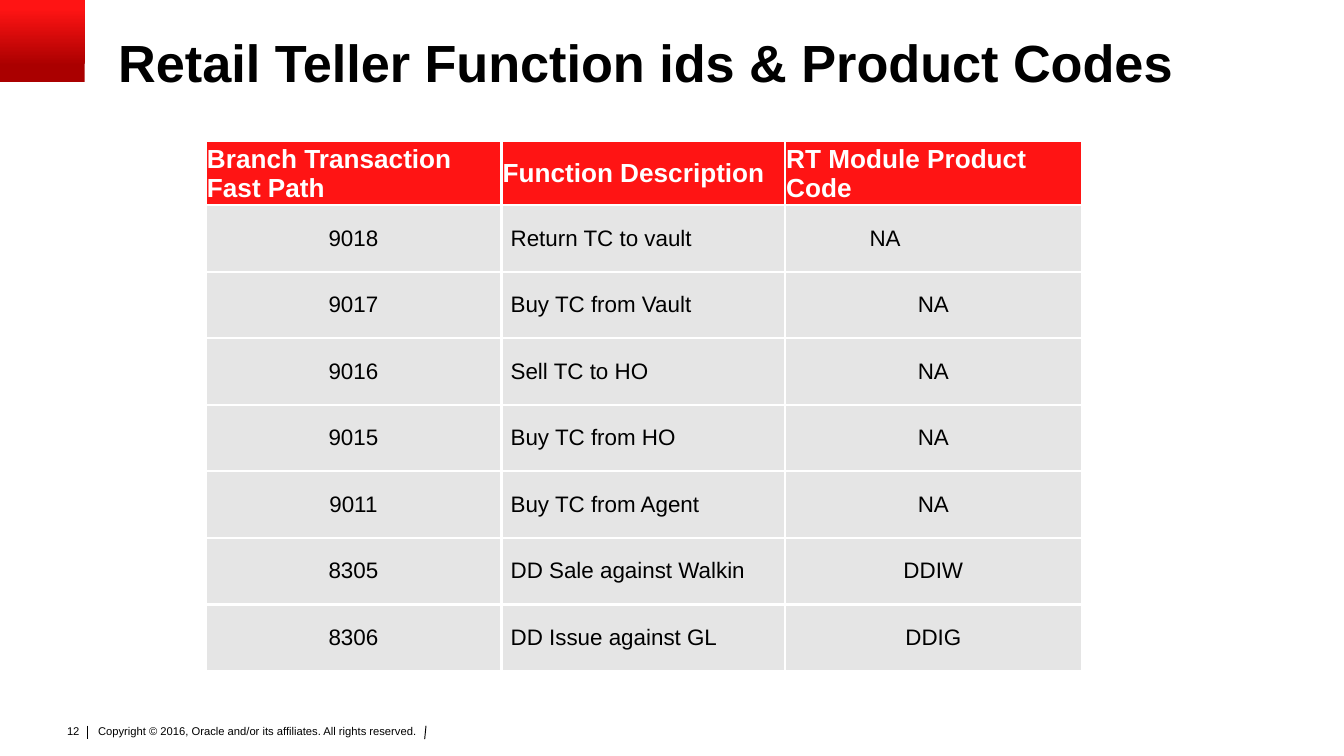
from dataclasses import dataclass
from typing import NamedTuple

from lxml.etree import SubElement
from pptx import Presentation
from pptx.dml.color import RGBColor as RGB
from pptx.enum.shapes import MSO_CONNECTOR as Conn, MSO_SHAPE as Shape
from pptx.enum.text import MSO_ANCHOR as Anchor, MSO_AUTO_SIZE as Auto, PP_ALIGN as Align
from pptx.oxml.ns import qn
from pptx.util import Pt

SCALE = 4572


@dataclass(frozen=True)
class Theme:
    font: str = "Arial"
    black: str = "000000"
    white: str = "FFFFFF"
    red: str = "FF1414"
    dark_red: str = "AA0000"
    grey: str = "E5E5E5"
    title: int = 28
    header: int = 14
    body: int = 12
    footer: int = 6
    border: float = 1.5
    rule: float = 0.5


T = Theme()


class Box(NamedTuple):
    x: int
    y: int
    w: int
    h: int


class Rule(NamedTuple):
    x1: int
    y1: int
    x2: int
    y2: int


class Label(NamedTuple):
    box: Box
    text: str
    size: int
    margins: tuple[int, int, int, int]
    bold: bool = False
    align: Align = Align.LEFT
    anchor: Anchor = Anchor.TOP
    spacing: float = 1.0
    wrap: bool = True


class Transaction(NamedTuple):
    fast_path: str
    description: str
    product: str
    product_indent: int = 0


LABELS = [
    Label(Box(138, 1074, 548, 48),
          "Copyright © 2016, Oracle and/or its affiliates. All rights reserved.",
          T.footer, (8, 4, 8, 4)),
    Label(Box(78, 1068, 60, 40), "12", T.footer, (20, 10, 20, 10),
          align=Align.RIGHT, wrap=False),
    Label(Box(176, 54, 1800, 88), "Retail Teller Function ids & Product Codes",
          T.title, (0, 0, 0, 0), bold=True, anchor=Anchor.MIDDLE, spacing=0.9),
]
RULES = [Rule(130, 1080, 130, 1100), Rule(634, 1080, 632, 1100)]
CORNER = Box(0, 0, 126, 122)

TABLE = Box(306, 210, 1304, 757)
COLUMNS = (440, 422, 442)
HEADER_HEIGHT, ROW_HEIGHT = 64, 99
HEADERS = ("Branch Transaction Fast Path", "Function Description", "RT Module Product Code")
TRANSACTIONS = [
    Transaction("9018", "Return TC to vault", "NA", 112),
    Transaction("9017", "Buy TC from Vault", "NA"),
    Transaction("9016", "Sell TC to HO", "NA"),
    Transaction("9015", "Buy TC from HO", "NA"),
    Transaction("9011", "Buy TC from Agent", "NA"),
    Transaction("8305", "DD Sale against Walkin", "DDIW"),
    Transaction("8306", "DD Issue against GL", "DDIG"),
]


def px(n: int) -> int:
    return n * SCALE


def write(tf, text: str, *, size: int, color: str = T.black, bold: bool = False,
          align: Align = Align.LEFT, spacing: float = 1.0) -> None:
    p = tf.paragraphs[0]
    p.alignment = align
    p.line_spacing = spacing
    r = p.add_run()
    r.text = text
    r.font.name = T.font
    r.font.size = Pt(size)
    r.font.bold = bold
    r.font.color.rgb = RGB.from_string(color)


def set_margins(target, margins: tuple[int, int, int, int]) -> None:
    target.margin_left, target.margin_top, target.margin_right, target.margin_bottom = map(px, margins)


def draw_label(s, label: Label) -> None:
    tf = s.shapes.add_textbox(*map(px, label.box)).text_frame
    tf.word_wrap = label.wrap
    tf.auto_size = Auto.NONE if label.wrap else Auto.SHAPE_TO_FIT_TEXT
    tf.vertical_anchor = label.anchor
    set_margins(tf, label.margins)
    write(tf, label.text, size=label.size, bold=label.bold, align=label.align,
          spacing=label.spacing)


def draw_rule(s, rule: Rule) -> None:
    line = s.shapes.add_connector(Conn.STRAIGHT, *map(px, rule))
    line.line.color.rgb = RGB.from_string(T.black)
    line.line.width = Pt(T.rule)
    SubElement(line._element.spPr, qn("a:effectLst"))


def draw_corner(s, box: Box) -> None:
    sp = s.shapes.add_shape(Shape.RECTANGLE, *map(px, box))
    sp.shadow.inherit = False
    sp.line.fill.background()
    sp.fill.gradient()
    sp.fill.gradient_angle = 90
    stops = ((0.2, T.dark_red), (0.9, T.red))
    for stop, (position, color) in zip(sp.fill.gradient_stops, stops):
        stop.position = position
        stop.color.rgb = RGB.from_string(color)


def draw_cell(cell, text: str, *, fill: str, margins: tuple[int, int, int, int],
              **text_format) -> None:
    tc_pr = cell._tc.get_or_add_tcPr()
    for side in ("L", "R", "T", "B"):
        ln = SubElement(tc_pr, qn(f"a:ln{side}"), w=str(Pt(T.border)))
        SubElement(SubElement(ln, qn("a:solidFill")), qn("a:srgbClr"), val=T.white)
    cell.fill.solid()
    cell.fill.fore_color.rgb = RGB.from_string(fill)
    cell.vertical_anchor = Anchor.MIDDLE
    set_margins(cell, margins)
    write(cell.text_frame, text, **text_format)


def draw_table(s, transactions: list[Transaction]) -> None:
    table = s.shapes.add_table(len(transactions) + 1, len(COLUMNS), *map(px, TABLE)).table
    table.horz_banding = False
    for column, width in zip(table.columns, COLUMNS):
        column.width = px(width)
    for i, row in enumerate(table.rows):
        row.height = px(ROW_HEIGHT if i else HEADER_HEIGHT)
    for col, text in enumerate(HEADERS):
        draw_cell(table.cell(0, col), text, fill=T.red, margins=(2, 2, 2, 0),
                  size=T.header, color=T.white, bold=True)
    for i, item in enumerate(transactions, 1):
        product_align = Align.LEFT if item.product_indent else Align.CENTER
        columns = (
            (item.fast_path, Align.CENTER, 0),
            (item.description, Align.LEFT, 0),
            (item.product, product_align, item.product_indent),
        )
        for col, (text, align, indent) in enumerate(columns):
            draw_cell(table.cell(i, col), text, fill=T.grey,
                      margins=(14 + indent, 0, 14, 0), size=T.body, align=align)


def main() -> None:
    prs = Presentation()
    prs.slide_width, prs.slide_height = px(2000), px(1125)
    s = prs.slides.add_slide(prs.slide_layouts[6])
    draw_corner(s, CORNER)
    for rule in RULES:
        draw_rule(s, rule)
    for label in LABELS:
        draw_label(s, label)
    draw_table(s, TRANSACTIONS)
    prs.save("out.pptx")


if __name__ == "__main__":
    main()
